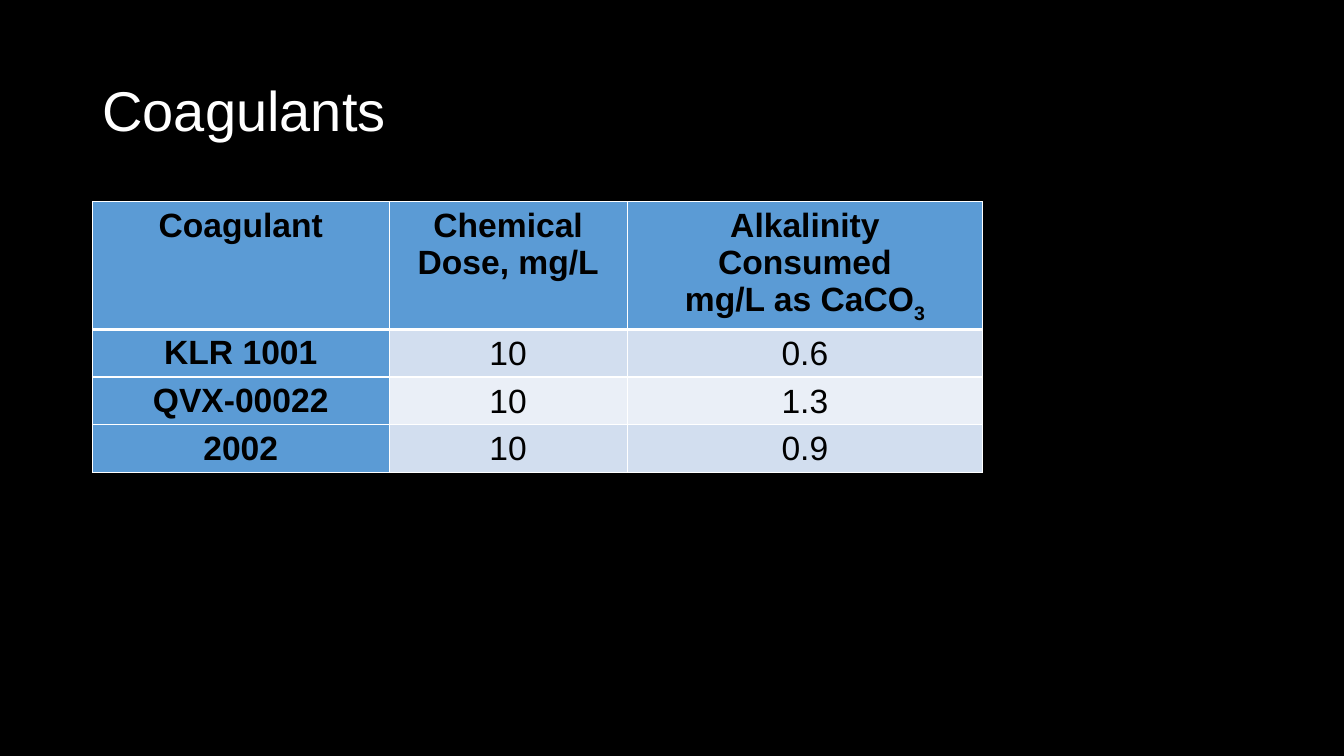
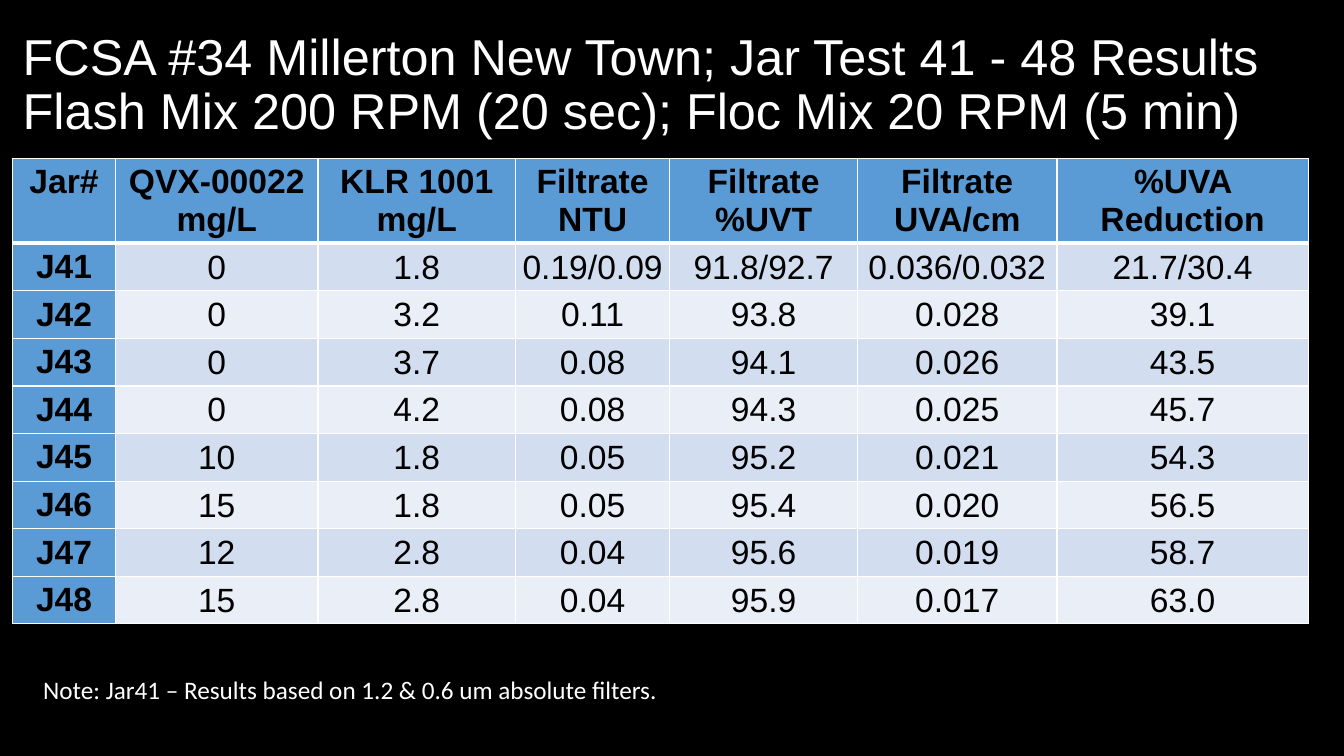
from lxml import etree
from pptx import Presentation
from pptx.dml.color import RGBColor
from pptx.enum.text import MSO_ANCHOR, MSO_AUTO_SIZE, PP_ALIGN
from pptx.oxml.ns import qn
from pptx.util import Pt

LEFT, CENTER = PP_ALIGN.LEFT, PP_ALIGN.CENTER
TOP, MIDDLE = MSO_ANCHOR.TOP, MSO_ANCHOR.MIDDLE
NO_FIT = MSO_AUTO_SIZE.NONE
TITLE_ONLY = 5
C = {"bg": "000000", "light": "FFFFFF", "dark": "000000", "head": "5B9BD5",
     "bands": ("D2DEEF", "EAEFF7")}
ROW_H = 33.9
LINE_H = 26.8

DOSES = [
    ["Coagulant", "Chemical\nDose, mg/L", "Alkalinity\nConsumed\nmg/L as CaCO_3"],
    ["KLR 1001", "10", "0.6"],
    ["QVX-00022", "10", "1.3"],
    ["2002", "10", "0.9"],
]
JARS = [
    ["Jar#", "QVX-00022\nmg/L", "KLR 1001\nmg/L", "Filtrate\nNTU",
     "Filtrate\n%UVT", "Filtrate\nUVA/cm", "%UVA Reduction"],
    ["J41", "0", "1.8", "0.19/0.09", "91.8/92.7", "0.036/0.032", "21.7/30.4"],
    ["J42", "0", "3.2", "0.11", "93.8", "0.028", "39.1"],
    ["J43", "0", "3.7", "0.08", "94.1", "0.026", "43.5"],
    ["J44", "0", "4.2", "0.08", "94.3", "0.025", "45.7"],
    ["J45", "10", "1.8", "0.05", "95.2", "0.021", "54.3"],
    ["J46", "15", "1.8", "0.05", "95.4", "0.020", "56.5"],
    ["J47", "12", "2.8", "0.04", "95.6", "0.019", "58.7"],
    ["J48", "15", "2.8", "0.04", "95.9", "0.017", "63.0"],
]


def write(tf, text, size=24, font="Arial", color=C["light"], bold=False,
          align=LEFT, spacing=None):
    """Fill a text frame: newline starts a paragraph, \\v breaks a line, _ starts a subscript."""
    for i, line in enumerate(text.split("\n")):
        p = tf.add_paragraph() if i else tf.paragraphs[0]
        p.alignment = align
        p.line_spacing = spacing
        base, _, sub = line.partition("_")
        p.text = base
        if sub:
            r = p.add_run()
            r.text = sub
            r.font._element.set("baseline", "-25000")
        for r in p.runs:
            r.font.name, r.font.size, r.font.bold = font, Pt(size), bold
            r.font.color.rgb = RGBColor.from_string(color)


def set_borders(cell, **widths):
    """Draw the sides L, R, T and B of a cell in the light colour."""
    tcPr = cell._tc.get_or_add_tcPr()
    for side, width in widths.items():
        ln = etree.SubElement(tcPr, qn(f"a:ln{side}"), w=str(Pt(width)))
        fill = etree.SubElement(ln, qn("a:solidFill"))
        etree.SubElement(fill, qn("a:srgbClr"), val=C["light"])


def add_title(s, text, box, size):
    """Place and format the slide's title."""
    title = s.shapes.title
    title.left, title.top, title.width, title.height = map(Pt, box)
    tf = title.text_frame
    tf.auto_size, tf.vertical_anchor, tf.word_wrap = NO_FIT, MIDDLE, True
    write(tf, text, size=size, spacing=0.9)


def add_grid(s, rows, left, top, widths, head_lines):
    """Add a table with a coloured header row and first column and banded values."""
    heights = [ROW_H + (head_lines - 1) * LINE_H] + [ROW_H] * (len(rows) - 1)
    table = s.shapes.add_table(len(rows), len(widths), Pt(left), Pt(top),
                               Pt(sum(widths)), Pt(sum(heights))).table
    for col, width in zip(table.columns, widths):
        col.width = Pt(width)
    for i, (row, height) in enumerate(zip(rows, heights)):
        table.rows[i].height = Pt(height)
        for j, text in enumerate(row):
            cell = table.cell(i, j)
            is_head = i == 0 or j == 0
            set_borders(cell, L=1, R=1, T=3 if i == 1 else 1, B=1 if i else 3)
            cell.fill.solid()
            cell.fill.fore_color.rgb = RGBColor.from_string(
                C["head"] if is_head else C["bands"][(i - 1) % 2])
            cell.vertical_anchor = TOP if is_head else MIDDLE
            if not is_head:
                cell.margin_left = cell.margin_right = cell.margin_top = Pt(0.7)
                cell.margin_bottom = 0
            write(cell.text_frame, text, color=C["dark"], bold=is_head, align=CENTER)


def add_note(s, text, box):
    """Add a note below a table."""
    tf = s.shapes.add_textbox(*map(Pt, box)).text_frame
    tf.word_wrap = True
    write(tf, text, size=18, font="Calibri")


def coagulants_slide(prs):
    """Build the slide of coagulant doses."""
    s = prs.slides.add_slide(prs.slide_layouts[TITLE_ONLY])
    add_title(s, "Coagulants", (66, 28.8, 828, 104.4), 40)
    add_grid(s, DOSES, 66, 144, (212, 170, 254), 3)


def jar_test_slide(prs):
    """Build the slide of jar test results."""
    s = prs.slides.add_slide(prs.slide_layouts[TITLE_ONLY])
    add_title(s, "FCSA #34 Millerton New Town; Jar Test 41 - 48 Results\v"
              "Flash Mix 200 RPM (20 sec); Floc Mix 20 RPM (5 min)",
              (9, 9.4, 938, 104.4), 36)
    add_grid(s, JARS, 9, 113, (73.5, 144.7, 141, 110.3, 134, 142.6, 179.4), 2)
    add_note(s, "Note: Jar41 – Results based on 1.2 & 0.6 um absolute filters.",
             (23.8, 478, 484.6, 28.8))


def main():
    """Build and save the presentation."""
    prs = Presentation()
    prs.slide_width, prs.slide_height = Pt(960), Pt(540)
    fill = prs.slide_master.background.fill
    fill.solid()
    fill.fore_color.rgb = RGBColor.from_string(C["bg"])
    coagulants_slide(prs)
    jar_test_slide(prs)
    prs.save("out.pptx")


if __name__ == "__main__":
    main()
